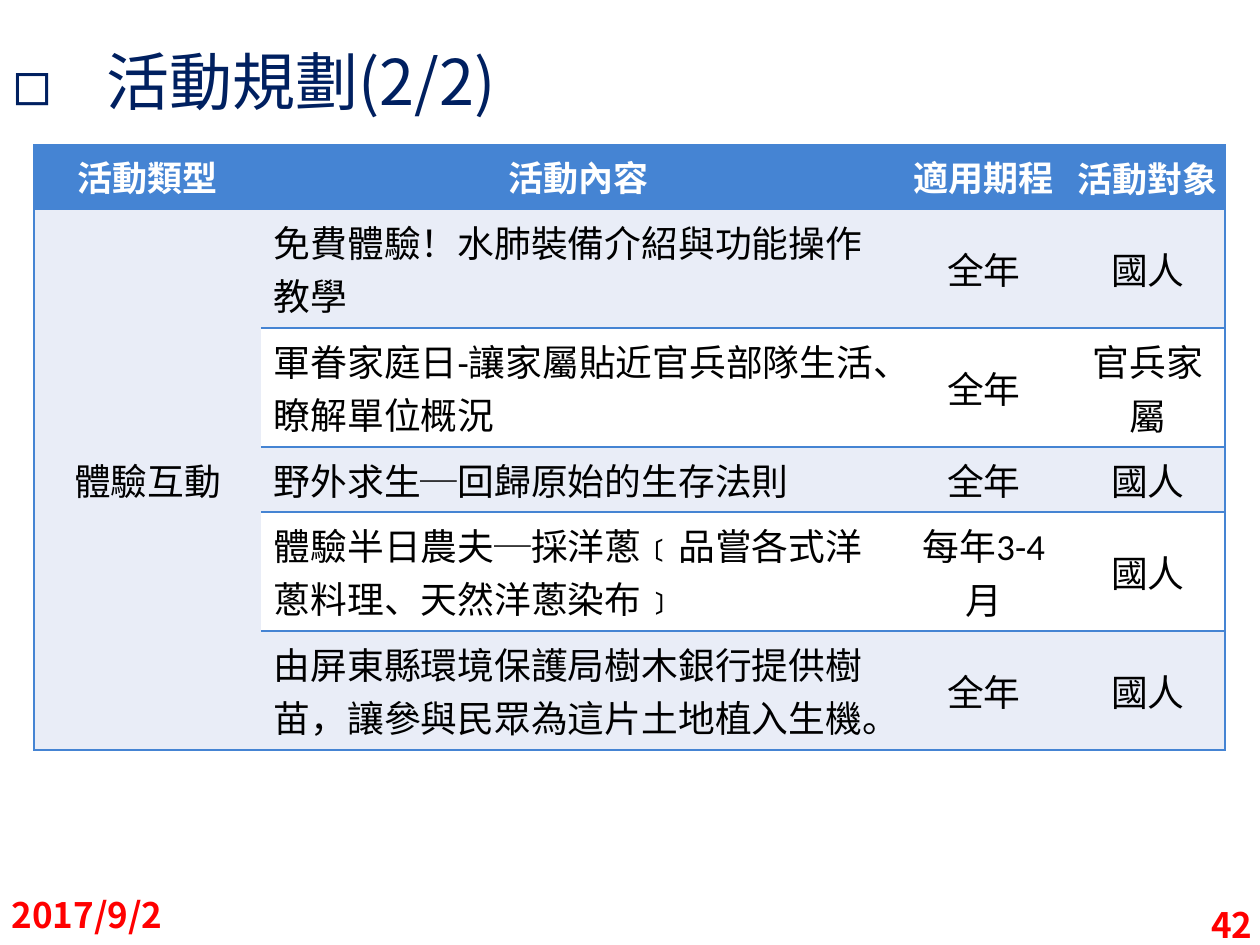
from lxml.etree import SubElement
from pptx import Presentation
from pptx.dml.color import RGBColor
from pptx.enum.text import MSO_ANCHOR, PP_ALIGN
from pptx.oxml.ns import qn
from pptx.util import Emu, Pt

PX = 914400 / 126
CJK = "Noto Sans CJK SC"
BLUE, PALE, WHITE, BLACK = "4584D3", "E9EDF7", "FFFFFF", "000000"
NAVY, RED = "002060", "FF0000"
COLUMNS = [227, 636, 174, 154]
ROW_HEIGHTS = [64, 119, 119, 65, 119, 119]
ROWS = [
    ["活動類型", "活動內容", "適用期程", "活動對象"],
    ["體驗互動", "免費體驗！水肺裝備介紹與功能操作教學", "全年", "國人"],
    ["", "軍眷家庭日-讓家屬貼近官兵部隊生活、瞭解單位概況", "全年", "官兵家屬"],
    ["", "野外求生─回歸原始的生存法則", "全年", "國人"],
    ["", "體驗半日農夫─採洋蔥﹝品嘗各式洋蔥料理、天然洋蔥染布﹞", "每年3-4月", "國人"],
    ["", "由屏東縣環境保護局樹木銀行提供樹苗，讓參與民眾為這片土地植入生機。", "全年", "國人"],
]


def px(n):
    return Emu(round(n * PX))


def rgb(value):
    return RGBColor.from_string(value)


def write(tf, text, size=20, color=BLACK, bold=False, font=CJK, align=PP_ALIGN.LEFT):
    tf.word_wrap = True
    p = tf.paragraphs[0]
    p.alignment = align
    r = p.add_run()
    r.text = text
    r.font.size = Pt(size)
    r.font.bold = bold
    r.font.name = font
    r.font.color.rgb = rgb(color)
    SubElement(r.font._element, qn("a:ea"), typeface=CJK)
    return p


def place(shape, x, y, w, h):
    shape.left, shape.top, shape.width, shape.height = map(px, (x, y, w, h))


def add_title(s, text):
    title = s.shapes.title
    place(title, 0, 16, 1260, 129)
    tf = title.text_frame
    tf.vertical_anchor = MSO_ANCHOR.MIDDLE
    p = write(tf, text, size=36, color=NAVY)
    pPr = p._p.get_or_add_pPr()
    pPr.set("marL", str(px(94)))
    pPr.set("indent", str(-px(94)))
    SubElement(pPr, qn("a:buFont"), typeface=CJK)
    SubElement(pPr, qn("a:buChar"), char="◻")


def add_label(s, x, y, text, **style):
    tb = s.shapes.add_textbox(px(x), px(y), px(294), px(50))
    tb.text_frame.vertical_anchor = MSO_ANCHOR.MIDDLE
    write(tb.text_frame, text, color=RED, bold=True, **style)


def set_borders(cell, sides):
    tcPr = cell._tc.get_or_add_tcPr()
    for side in "LRTB":
        if side in sides:
            ln = SubElement(tcPr, qn(f"a:ln{side}"), w=str(Pt(1)))
            fill = SubElement(ln, qn("a:solidFill"))
            SubElement(fill, qn("a:srgbClr"), val=BLUE)


def borders_at(row, col):
    last_row, last_col = len(ROWS) - 1, len(COLUMNS) - 1
    sides = {0: "L", last_col: "R"}.get(col, "")
    if col > 0 or row <= 1:
        sides += "T"
    if col > 0 or row in (0, 1, last_row):
        sides += "B"
    return sides


def format_cell(cell, row, col, text):
    header = row == 0
    set_borders(cell, borders_at(row, col))
    cell.fill.solid()
    cell.fill.fore_color.rgb = rgb(BLUE if header else PALE if row % 2 else WHITE)
    tight = header and col == len(COLUMNS) - 1
    cell.margin_left = cell.margin_right = px(2 if tight else 13)
    cell.margin_top = cell.margin_bottom = px(0 if tight else 6)
    middle = tight or (not header and col != 1)
    cell.vertical_anchor = MSO_ANCHOR.MIDDLE if middle else MSO_ANCHOR.TOP
    if text:
        write(cell.text_frame, text, size=20 if header else 21,
              color=WHITE if header else BLACK, bold=header, font="Calibri",
              align=PP_ALIGN.LEFT if col == 1 and not header else PP_ALIGN.CENTER)


def add_activity_table(s):
    frame = s.shapes.add_table(len(ROWS), len(COLUMNS), px(34), px(145),
                               px(sum(COLUMNS)), px(sum(ROW_HEIGHTS)))
    table = frame.table
    table.first_row = table.horz_banding = False
    style = table._tbl.tblPr.find(qn("a:tableStyleId"))
    style.text = "{2D5ABB26-0587-4C30-8999-92F81FD0307C}"
    for column, width in zip(table.columns, COLUMNS):
        column.width = px(width)
    for row, height in zip(table.rows, ROW_HEIGHTS):
        row.height = px(height)
    table.cell(1, 0).merge(table.cell(len(ROWS) - 1, 0))
    for i, texts in enumerate(ROWS):
        for j, text in enumerate(texts):
            format_cell(table.cell(i, j), i, j, text)


def main():
    prs = Presentation()
    prs.slide_width, prs.slide_height = px(1260), px(945)
    s = prs.slides.add_slide(prs.slide_layouts[5])
    add_title(s, "活動規劃(2/2)")
    add_activity_table(s)
    add_label(s, -1, 890, "2017/9/2")
    add_label(s, 971, 900, "42", align=PP_ALIGN.RIGHT)
    prs.save("out.pptx")


if __name__ == "__main__":
    main()
